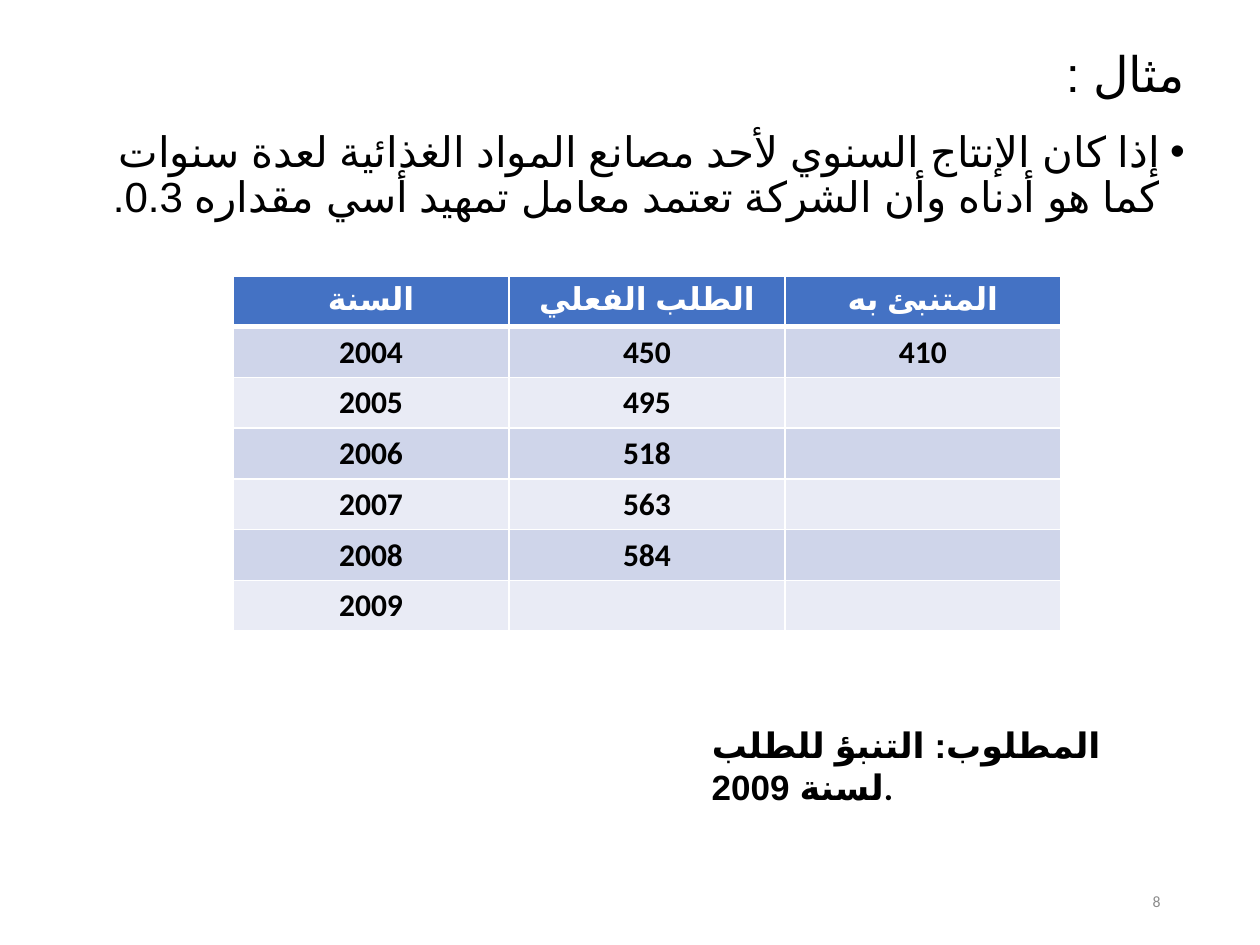
from dataclasses import dataclass

from lxml import etree
from pptx import Presentation
from pptx import util as u
from pptx.dml.color import RGBColor
from pptx.enum import text
from pptx.oxml import ns

FONT, ARABIC_FONT = "Calibri", "Arial"
BLACK, WHITE, GREY = "000000", "FFFFFF", "8C8C8C"
HEADER_FILL = "4472C4"
BAND_FILLS = ("CFD5EA", "E9EBF5")
LEFT, CENTER, RIGHT = text.PP_ALIGN.LEFT, text.PP_ALIGN.CENTER, text.PP_ALIGN.RIGHT
TOP, MIDDLE = text.MSO_ANCHOR.TOP, text.MSO_ANCHOR.MIDDLE

DEMAND_ROWS = [
    ("السنة", "الطلب الفعلي", "المتنبئ به"),
    ("2004", "450", "410"),
    ("2005", "495", ""),
    ("2006", "518", ""),
    ("2007", "563", ""),
    ("2008", "584", ""),
    ("2009", "", ""),
]


@dataclass
class TextBlock:
    words: str
    left: float
    top: float
    width: float
    height: float
    size: float
    color: str = BLACK
    bold: bool = False
    align: text.PP_ALIGN = RIGHT
    anchor: text.MSO_ANCHOR = TOP
    rtl: bool = False
    bullet: bool = False
    line_spacing: float = 1.0
    space_before: float = 0


BLOCKS = [
    TextBlock("مثال :", 0.5, 0.3, 9, 0.61, 28, anchor=MIDDLE, rtl=True, line_spacing=0.9),
    TextBlock(
        "إذا كان الإنتاج السنوي لأحد مصانع المواد الغذائية لعدة سنوات "
        "كما هو أدناه وأن الشركة تعتمد معامل تمهيد أسي مقداره 0.3.",
        0.5, 0.99, 9, 5.71, 24,
        rtl=True, bullet=True, line_spacing=0.9, space_before=7.5,
    ),
    TextBlock("8", 7.06, 6.95, 2.25, 0.4, 9, color=GREY, anchor=MIDDLE),
    TextBlock("المطلوب: التنبؤ للطلب لسنة 2009.", 5.55, 5.69, 3.41, 0.74, 20,
              bold=True, align=LEFT),
]


def rgb(color: str) -> RGBColor:
    return RGBColor.from_string(color)


def write(para, words: str, *, size: float, color: str, bold: bool, align) -> None:
    para.alignment = align
    span = para.add_run()
    span.text = words
    span.font.name = FONT
    span.font.size = u.Pt(size)
    span.font.bold = bold
    span.font.color.rgb = rgb(color)
    props = span._r.get_or_add_rPr()
    props.set("lang", "ar-SA")
    etree.SubElement(props, ns.qn("a:cs"), typeface=ARABIC_FONT)


def add_bullet(para) -> None:
    """Give the paragraph a round bullet with a hanging indent."""
    props = para._p.get_or_add_pPr()
    props.set("marR", "0")
    props.set("marL", str(u.Inches(0.19)))
    props.set("indent", str(u.Inches(-0.19)))
    etree.SubElement(props, ns.qn("a:buFont"), typeface=ARABIC_FONT)
    etree.SubElement(props, ns.qn("a:buChar"), char="•")


def add_text(page, block: TextBlock) -> None:
    box = page.shapes.add_textbox(
        u.Inches(block.left), u.Inches(block.top), u.Inches(block.width), u.Inches(block.height)
    )
    frame = box.text_frame
    frame.word_wrap = True
    frame.vertical_anchor = block.anchor
    para = frame.paragraphs[0]
    write(para, block.words, size=block.size, color=block.color,
          bold=block.bold, align=block.align)
    para.line_spacing = block.line_spacing
    para.space_before = u.Pt(block.space_before)
    if block.rtl:
        para._p.get_or_add_pPr().set("rtl", "1")
    if block.bullet:
        add_bullet(para)


def set_borders(cell, *, top: float = 1, bottom: float = 1) -> None:
    """Draw white cell borders; widths are in points."""
    props = cell._tc.get_or_add_tcPr()
    for side, width in (("L", 1), ("R", 1), ("T", top), ("B", bottom)):
        line = etree.SubElement(props, ns.qn(f"a:ln{side}"), w=str(u.Pt(width)))
        fill = etree.SubElement(line, ns.qn("a:solidFill"))
        etree.SubElement(fill, ns.qn("a:srgbClr"), val=WHITE)


def add_demand_table(page) -> None:
    columns = len(DEMAND_ROWS[0])
    table = page.shapes.add_table(
        len(DEMAND_ROWS), columns,
        u.Inches(1.85), u.Inches(2.19), u.Inches(6.57), u.Inches(2.82),
    ).table
    for row, values in enumerate(DEMAND_ROWS):
        is_header = row == 0
        for column, value in enumerate(values):
            cell = table.cell(row, column)
            set_borders(cell, top=3 if row == 1 else 1, bottom=3 if is_header else 1)
            cell.fill.solid()
            cell.fill.fore_color.rgb = rgb(HEADER_FILL if is_header else BAND_FILLS[(row - 1) % 2])
            if value:
                write(cell.text_frame.paragraphs[0], value, size=18, bold=True,
                      color=WHITE if is_header else BLACK, align=CENTER)


def main() -> None:
    deck = Presentation()
    deck.slide_width, deck.slide_height = u.Inches(10), u.Inches(7.5)
    page = deck.slides.add_slide(deck.slide_layouts[6])
    for block in BLOCKS:
        add_text(page, block)
    add_demand_table(page)
    deck.save("out.pptx")


if __name__ == "__main__":
    main()
